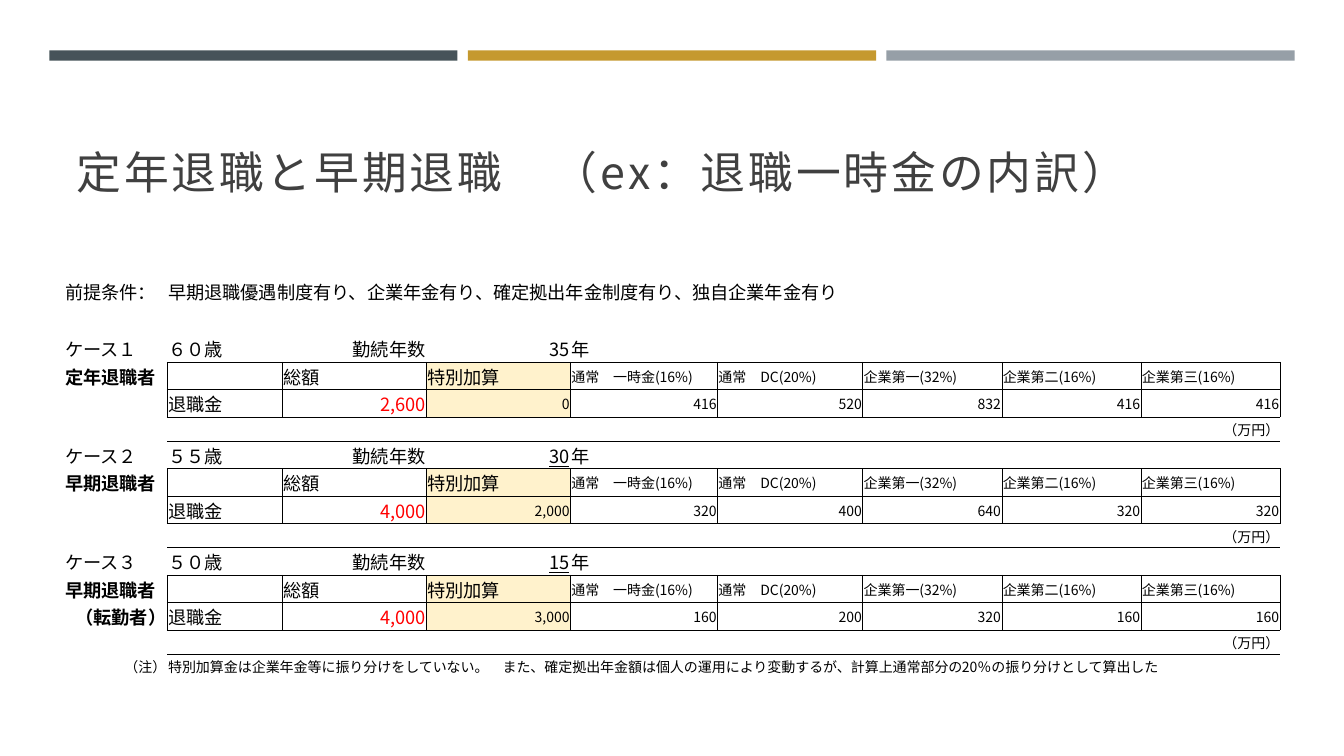
from lxml import etree
from pptx import Presentation
from pptx import util as u
from pptx.dml.color import RGBColor
from pptx.enum import shapes, text
from pptx.oxml import ns

FONT = "Noto Sans CJK JP"
NO_STYLE = "{2D5ABB26-0587-4C30-8999-92F81FD0307C}"
COLUMNS = [73.4, 82.1, 103, 103, 105.1, 103.7, 99.4, 99.4, 99.4]
FULL, SHORT = 19.6, 17.3
ROWS = [FULL, 21.6] + [FULL, FULL, FULL, SHORT] * 3 + [SHORT]
HEADINGS = ["総額", "特別加算", "通常　一時金(16%)", "通常　DC(20%)",
            "企業第一(32%)", "企業第二(16%)", "企業第三(16%)"]
BONUS_COLUMN = 3
RIGHT = text.PP_ALIGN.RIGHT

# case, age, years of service, labels beside the grid, amounts
CASES = [
    ("ケース１", "６０歳", "35", ["定年退職者", ""],
     ["2,600", "0", "416", "520", "832", "416", "416"]),
    ("ケース２", "５５歳", "30", ["早期退職者", ""],
     ["4,000", "2,000", "320", "400", "640", "320", "320"]),
    ("ケース３", "５０歳", "15", ["早期退職者", "（転勤者）"],
     ["4,000", "3,000", "160", "200", "320", "160", "160"]),
]


def colour(value):
    return RGBColor.from_string(value)


def write(para, words, size=13, tint="000000", align=None, **formats):
    para.alignment = align
    span = para.add_run()
    span.text = words
    span.font.color.rgb = colour(tint)
    for name, value in {"size": u.Pt(size), "name": FONT, **formats}.items():
        setattr(span.font, name, value)
    east_asian = etree.SubElement(span.font._element, ns.qn("a:ea"))
    east_asian.set("typeface", FONT)
    return span


def set_margins(target, left, top, right, bottom):
    sides = {"left": left, "top": top, "right": right, "bottom": bottom}
    for side, value in sides.items():
        setattr(target, f"margin_{side}", u.Pt(value))


def add_bar(page, left, tint):
    bar = page.shapes.add_shape(shapes.MSO_SHAPE.RECTANGLE, u.Pt(left),
                                u.Pt(36), u.Pt(291.6), u.Pt(7.4))
    bar.shadow.inherit = False
    bar.fill.solid()
    bar.fill.fore_color.rgb = colour(tint)
    bar.line.fill.background()


def add_title(page, words):
    box = page.shapes.add_textbox(u.Pt(46), u.Pt(55.4), u.Pt(868.4), u.Pt(93.6))
    frame = box.text_frame
    frame.word_wrap = True
    frame.vertical_anchor = text.MSO_ANCHOR.BOTTOM
    set_margins(frame, 8.6, 8.6, 8.6, 7.2)
    para = frame.paragraphs[0]
    para.line_spacing = 1.1
    span = write(para, words, 32, "404040")
    span.font._element.set("spc", "200")


def in_grid(row, column):
    return 1 <= column <= 8 and 3 <= row <= 12 and row % 4 in (0, 3)


def draw_borders(cell, row, column):
    neighbours = {"lnL": (row, column - 1), "lnR": (row, column + 1),
                  "lnT": (row - 1, column), "lnB": (row + 1, column)}
    properties = cell._tc.get_or_add_tcPr()
    for side, neighbour in neighbours.items():
        if not (in_grid(row, column) or in_grid(*neighbour)):
            continue
        line = etree.SubElement(properties, ns.qn(f"a:{side}"), w="6350")
        fill = etree.SubElement(line, ns.qn("a:solidFill"))
        etree.SubElement(fill, ns.qn("a:srgbClr"), val="000000")


def format_cell(cell, row, column):
    set_margins(cell, 0.7, 0.7, 0.7, 0)
    cell.vertical_anchor = text.MSO_ANCHOR.MIDDLE
    draw_borders(cell, row, column)
    if in_grid(row, column) and column == BONUS_COLUMN:
        cell.fill.solid()
        cell.fill.fore_color.rgb = colour("FFF2CC")
    else:
        cell.fill.background()
    # Empty cells need a small type size to keep their row height
    para = cell.text_frame.paragraphs[0]
    if not para.runs:
        etree.SubElement(para._p, ns.qn("a:endParaRPr"), sz="1000")


def fill_case(put, top, case):
    name, age, years, labels, amounts = case
    # Line above the grid
    put(top, 0, name)
    put(top, 1, age)
    put(top, 2, "勤続年数", align=RIGHT)
    put(top, 3, years, align=RIGHT, underline=years != "35")
    put(top, 4, "年")
    # Labels beside the grid
    put(top + 1, 0, labels[0], bold=True)
    put(top + 2, 0, labels[1], bold=True, align=RIGHT)
    put(top + 2, 1, "退職金")
    # Headings and amounts
    for column, (heading, amount) in enumerate(zip(HEADINGS, amounts), 2):
        put(top + 1, column, heading, 13 if column <= BONUS_COLUMN else 10)
        total = column == 2
        put(top + 2, column, amount, 13 if total else 10,
            "FF0000" if total else "000000", RIGHT)
    put(top + 3, 8, "（万円）", 10, align=RIGHT)


def add_breakdown(page):
    frame = page.shapes.add_table(len(ROWS), len(COLUMNS), u.Pt(46), u.Pt(198),
                                  u.Pt(sum(COLUMNS)), u.Pt(sum(ROWS)))
    table = frame.table
    table.first_row = table.horz_banding = False
    table._tbl.tblPr.find(ns.qn("a:tableStyleId")).text = NO_STYLE
    for column, width in zip(table.columns, COLUMNS):
        column.width = u.Pt(width)
    for row, height in zip(table.rows, ROWS):
        row.height = u.Pt(height)

    def put(row, column, words, *args, **formats):
        if words:
            para = table.cell(row, column).text_frame.paragraphs[0]
            write(para, words, *args, **formats)

    # Conditions
    table.cell(0, 1).merge(table.cell(0, 5))
    put(0, 0, "前提条件：")
    put(0, 1, "早期退職優遇制度有り、企業年金有り、確定拠出年金制度有り、独自企業年金有り")

    for index, case in enumerate(CASES):
        fill_case(put, 2 + 4 * index, case)

    # Footnote
    table.cell(14, 1).merge(table.cell(14, 8))
    put(14, 0, "（注）", 10, align=RIGHT)
    put(14, 1, "特別加算金は企業年金等に振り分けをしていない。　また、確定拠出年金額は"
               "個人の運用により変動するが、計算上通常部分の20％の振り分けとして算出した", 10)

    for row in range(len(ROWS)):
        for column in range(len(COLUMNS)):
            format_cell(table.cell(row, column), row, column)


def main():
    deck = Presentation()
    deck.slide_width, deck.slide_height = u.Pt(960), u.Pt(540)
    page = deck.slides.add_slide(deck.slide_layouts[6])
    for index, tint in enumerate(["465359", "C5992F", "969FA7"]):
        add_bar(page, 35.2 + 299 * index, tint)
    add_title(page, "定年退職と早期退職　（ex：退職一時金の内訳）")
    add_breakdown(page)
    deck.save("out.pptx")


if __name__ == "__main__":
    main()
